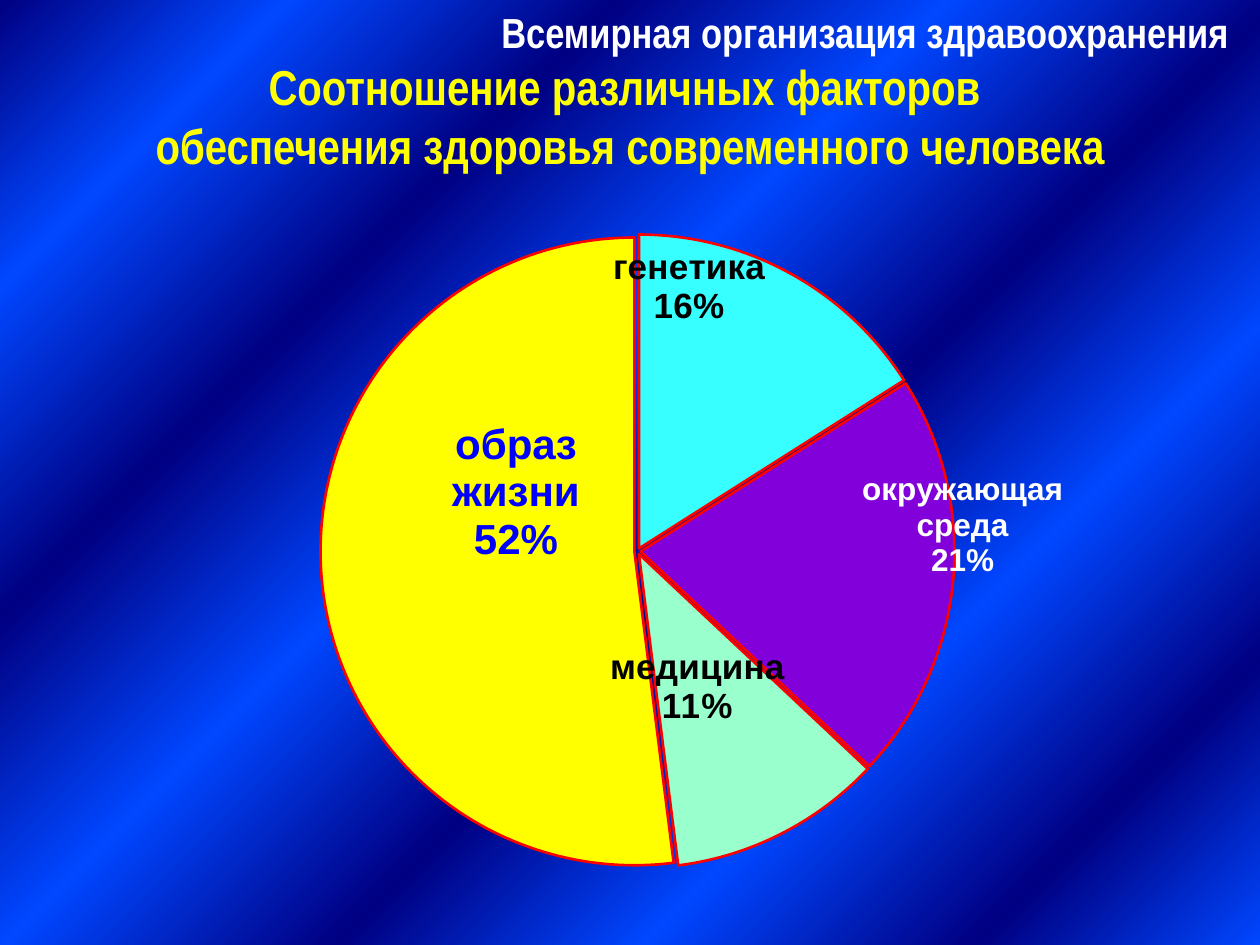
"""Build a slide with a pie chart of the factors behind human health."""
import lxml.etree
import pptx
import pptx.chart.data
import pptx.dml.color
import pptx.enum.chart
import pptx.enum.text
import pptx.oxml.ns
import pptx.util
from pptx.util import Inches

COLORS = {
    "navy": "000082", "azure": "0047FF", "white": "FFFFFF", "yellow": "FFFF00",
    "cyan": "37FFFF", "purple": "8200DA", "mint": "99FFCC", "red": "FF0000",
    "blue": "0000FF", "black": "000000",
}


def rgb(name):
    return pptx.dml.color.RGBColor.from_string(COLORS[name])


def add_node(parent, tag, **attributes):
    node = lxml.etree.SubElement(parent, pptx.oxml.ns.qn(tag))
    for key, value in attributes.items():
        node.set(key, str(value))
    return node


deck = pptx.Presentation()
deck.slide_width, deck.slide_height = Inches(10), Inches(7.5)
page = deck.slides.add_slide(deck.slide_layouts[6])

backdrop = page.background.fill
backdrop.gradient()
backdrop.gradient_angle = 315
stop_list = page.background._cSld.find(".//" + pptx.oxml.ns.qn("a:gsLst"))
for stop in list(stop_list):
    stop_list.remove(stop)
for index, percent in enumerate([0, 13, 28, 43, 58, 72, 87, 100]):
    stop = add_node(stop_list, "a:gs", pos=percent * 1000)
    add_node(stop, "a:srgbClr", val=COLORS[("navy", "azure")[index % 2]])

factors = [
    ("генетика", 16, "cyan", "black", 20, -0.02, -0.18),
    ("окружающая среда", 21, "purple", "white", 18, 0.13, -0.06),
    ("медицина", 11, "mint", "black", 20, -0.01, -0.01),
    ("образ жизни", 52, "yellow", "blue", 24, 0.03, -0.1),
]
chart_data = pptx.chart.data.CategoryChartData()
chart_data.categories = [factor[0] for factor in factors]
chart_data.add_series("Series 1", [factor[1] for factor in factors])
chart = page.shapes.add_chart(
    pptx.enum.chart.XL_CHART_TYPE.PIE, Inches(0), Inches(1.64),
    Inches(10.12), Inches(5.47), chart_data).chart
chart.has_legend = False
chart.has_title = False
chart.font.name = "Arial"
chart.font.size = pptx.util.Pt(18)
chart.font.color.rgb = rgb("white")

pie = chart.plots[0]
pie.vary_by_categories = True
series = pie.series[0]
series.format.line.color.rgb = rgb("red")
series.format.line.width = pptx.util.Pt(1.5)
explosion = lxml.etree.Element(pptx.oxml.ns.qn("c:explosion"), val="1")
series._element.find(pptx.oxml.ns.qn("c:spPr")).addnext(explosion)

labels = series.data_labels
labels.show_value = False
labels.show_percentage = True
labels.show_category_name = True
labels.font.size = pptx.util.Pt(20)
labels.font.bold = True
labels.font.color.rgb = rgb("blue")

for index, (name, share, fill, ink, size, shift_x, shift_y) in enumerate(factors):
    point = series.points[index]
    point.format.fill.solid()
    point.format.fill.fore_color.rgb = rgb(fill)
    point.format.line.color.rgb = rgb("red")
    point.format.line.width = pptx.util.Pt(1.5)
    label = point.data_label
    label.font.name = "Arial"
    label.font.size = pptx.util.Pt(size)
    label.font.bold = True
    label.font.color.rgb = rgb(ink)
    label.position = pptx.enum.chart.XL_LABEL_POSITION.CENTER

for node, factor in zip(labels._element.findall(pptx.oxml.ns.qn("c:dLbl")), factors):
    for tag, shown in (("c:showVal", 0), ("c:showCatName", 1), ("c:showPercent", 1)):
        node.find(pptx.oxml.ns.qn(tag)).set("val", str(shown))
    add_node(node, "c:separator").text = "\n"
    layout = lxml.etree.Element(pptx.oxml.ns.qn("c:layout"))
    manual = add_node(layout, "c:manualLayout")
    add_node(manual, "c:x", val=factor[5])
    add_node(manual, "c:y", val=factor[6])
    node.find(pptx.oxml.ns.qn("c:idx")).addnext(layout)

plot_area = chart._chartSpace.find(".//" + pptx.oxml.ns.qn("c:plotArea"))
for old_layout in plot_area.findall(pptx.oxml.ns.qn("c:layout")):
    plot_area.remove(old_layout)
plot_layout = lxml.etree.Element(pptx.oxml.ns.qn("c:layout"))
plot_area.insert(0, plot_layout)
manual = add_node(plot_layout, "c:manualLayout")
for tag, value in (("layoutTarget", "inner"), ("xMode", "edge"), ("yMode", "edge"),
                   ("x", 0), ("y", 0.04), ("w", 1), ("h", 0.92)):
    add_node(manual, "c:" + tag, val=value)

heading = page.shapes.add_textbox(Inches(0), Inches(0), Inches(10), Inches(1.45))
frame = heading.text_frame
frame.word_wrap = True
frame.auto_size = pptx.enum.text.MSO_AUTO_SIZE.SHAPE_TO_FIT_TEXT
align = pptx.enum.text.PP_ALIGN
heading_lines = [
    ("Всемирная организация здравоохранения", 24, "white", align.RIGHT, 0.15),
    ("Соотношение различных факторов ", 28, "yellow", align.CENTER, 0),
    ("обеспечения здоровья современного человека", 28, "yellow", align.CENTER, 0),
]
for index, (text, size, color, alignment, indent) in enumerate(heading_lines):
    para = frame.add_paragraph() if index else frame.paragraphs[0]
    para.alignment = alignment
    para._p.get_or_add_pPr().set("marR", str(Inches(indent)))
    span = para.add_run()
    span.text = text
    span.font.name = "Arial Narrow"
    span.font.size = pptx.util.Pt(size)
    span.font.bold = True
    span.font.color.rgb = rgb(color)

deck.save("out.pptx")
